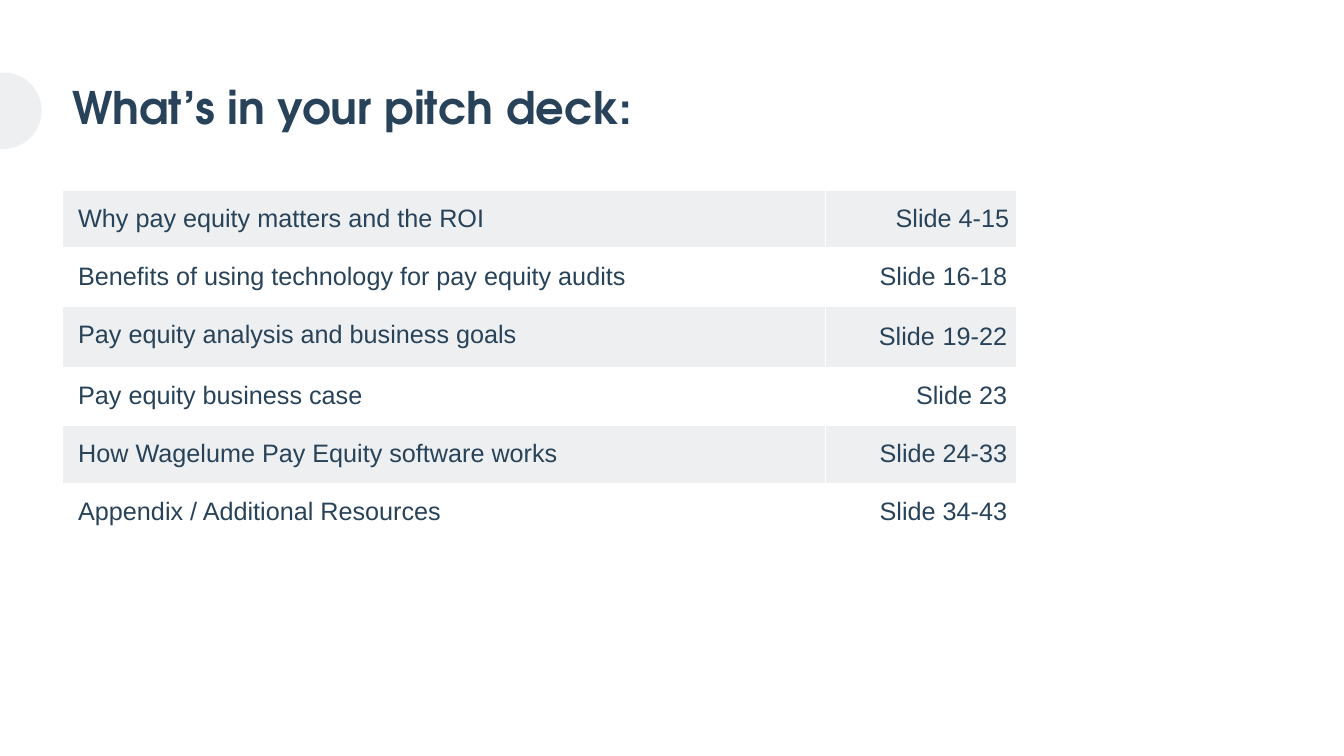
"""Build the contents slide of a pay equity pitch deck."""
import dataclasses
import math

import lxml.etree
import pptx
import pptx.dml.color
import pptx.enum.text
import pptx.oxml.ns
import pptx.util

Cm = pptx.util.Cm
Pt = pptx.util.Pt
ALIGN = pptx.enum.text.PP_ALIGN


@dataclasses.dataclass(frozen=True)
class Theme:
    """Colours, fonts and type sizes of the slide."""
    ink: str = "284359"
    band: str = "EDEFF0"
    paper: str = "FFFFFF"
    title_font: str = "TeX Gyre Adventor"
    body_font: str = "Arial"
    title_size: int = 32
    body_size: int = 18
    space_size: int = 20


THEME = Theme()

CONTENTS = [
    ("Why pay equity matters and the ROI", ["Slide 4-15"]),
    ("Benefits of using technology for pay equity audits", ["Slide 16-18"]),
    ("Pay equity analysis and business goals", ["Slide", " ", "19-22"]),
    ("Pay equity business case", ["Slide 23"]),
    ("How Wagelume Pay Equity software works", ["Slide 24-33"]),
    ("Appendix / Additional Resources", ["Slide 34-43"]),
]


def rgb(value):
    """Turn a hex string into a colour."""
    return pptx.dml.color.RGBColor.from_string(value)


def add_text(paragraph, text, *, size=THEME.body_size, font=THEME.body_font,
             bold=False, align=ALIGN.LEFT):
    """Append a formatted run to a paragraph."""
    paragraph.alignment = align
    run = paragraph.add_run()
    run.text = text
    run.font.size = Pt(size)
    run.font.name = font
    run.font.bold = bold
    run.font.color.rgb = rgb(THEME.ink)


def add_title(slide, text):
    """Add the slide title, centred vertically in its box."""
    box = slide.shapes.add_textbox(Cm(1.57), Cm(1.5), Cm(30.5), Cm(2.54))
    frame = box.text_frame
    frame.word_wrap = True
    frame.vertical_anchor = pptx.enum.text.MSO_ANCHOR.MIDDLE
    paragraph = frame.paragraphs[0]
    paragraph.line_spacing = 0.9
    add_text(paragraph, text, size=THEME.title_size, font=THEME.title_font, bold=True)


def set_borders(cell, widths):
    """Draw solid borders on a cell, with widths in points keyed by side."""
    properties = cell._tc.get_or_add_tcPr()
    for index, side in enumerate("LRTB"):
        line = lxml.etree.Element(pptx.oxml.ns.qn(f"a:ln{side}"), w=str(Pt(widths[side])))
        fill = lxml.etree.SubElement(line, pptx.oxml.ns.qn("a:solidFill"))
        lxml.etree.SubElement(fill, pptx.oxml.ns.qn("a:srgbClr"), val=THEME.paper)
        properties.insert(index, line)


def fill_cell(cell, texts, *, row, align):
    """Write the runs of one cell and set its band colour, margins and borders."""
    cell.fill.solid()
    cell.fill.fore_color.rgb = rgb(THEME.paper if row % 2 else THEME.band)
    cell.margin_left = Cm(0.4)
    cell.margin_right = Cm(0.25 if row else 0.2)
    cell.margin_top = cell.margin_bottom = Cm(0.35)
    for text in texts:
        size = THEME.body_size if text.strip() else THEME.space_size
        add_text(cell.text_frame.paragraphs[0], text, size=size, align=align)
    set_borders(cell, {"L": 1, "R": 1, "T": 3 if row == 1 else 1, "B": 1 if row else 3})


def add_contents_table(slide, contents):
    """Add the banded table of topics and slide ranges."""
    frame = slide.shapes.add_table(
        len(contents), 2, Cm(1.57), Cm(4.8), Cm(24.06), Cm(1.42 * len(contents)))
    table = frame.table
    table.first_row = table.horz_banding = False
    table.columns[0].width = Cm(19.23)
    table.columns[1].width = Cm(4.83)
    for row, (topic, slide_range) in enumerate(contents):
        table.rows[row].height = Cm(1.42)
        fill_cell(table.cell(row, 0), [topic], row=row, align=ALIGN.LEFT)
        fill_cell(table.cell(row, 1), slide_range, row=row, align=ALIGN.RIGHT)


def add_edge_disc(slide, *, center_x, center_y, radius):
    """Add a disc cut off by the left edge of the slide."""
    angles = [math.radians(degrees) for degrees in range(-90, 91, 3)]
    arc = [(Cm(center_x + radius * math.cos(angle)), Cm(center_y + radius * math.sin(angle)))
           for angle in angles]
    builder = slide.shapes.build_freeform(0, Cm(center_y - radius))
    builder.add_line_segments(arc + [(0, Cm(center_y + radius))], close=True)
    shape = builder.convert_to_shape()
    shape.shadow.inherit = False
    shape.fill.solid()
    shape.fill.fore_color.rgb = rgb(THEME.band)
    shape.line.fill.background()


def main():
    """Build and save the presentation."""
    presentation = pptx.Presentation()
    presentation.slide_width = Cm(33.87)
    presentation.slide_height = Cm(19.05)
    slide = presentation.slides.add_slide(presentation.slide_layouts[6])
    add_title(slide, "What’s in your pitch deck:")
    add_contents_table(slide, CONTENTS)
    add_edge_disc(slide, center_x=0.09, center_y=2.79, radius=0.96)
    presentation.save("out.pptx")


if __name__ == "__main__":
    main()
